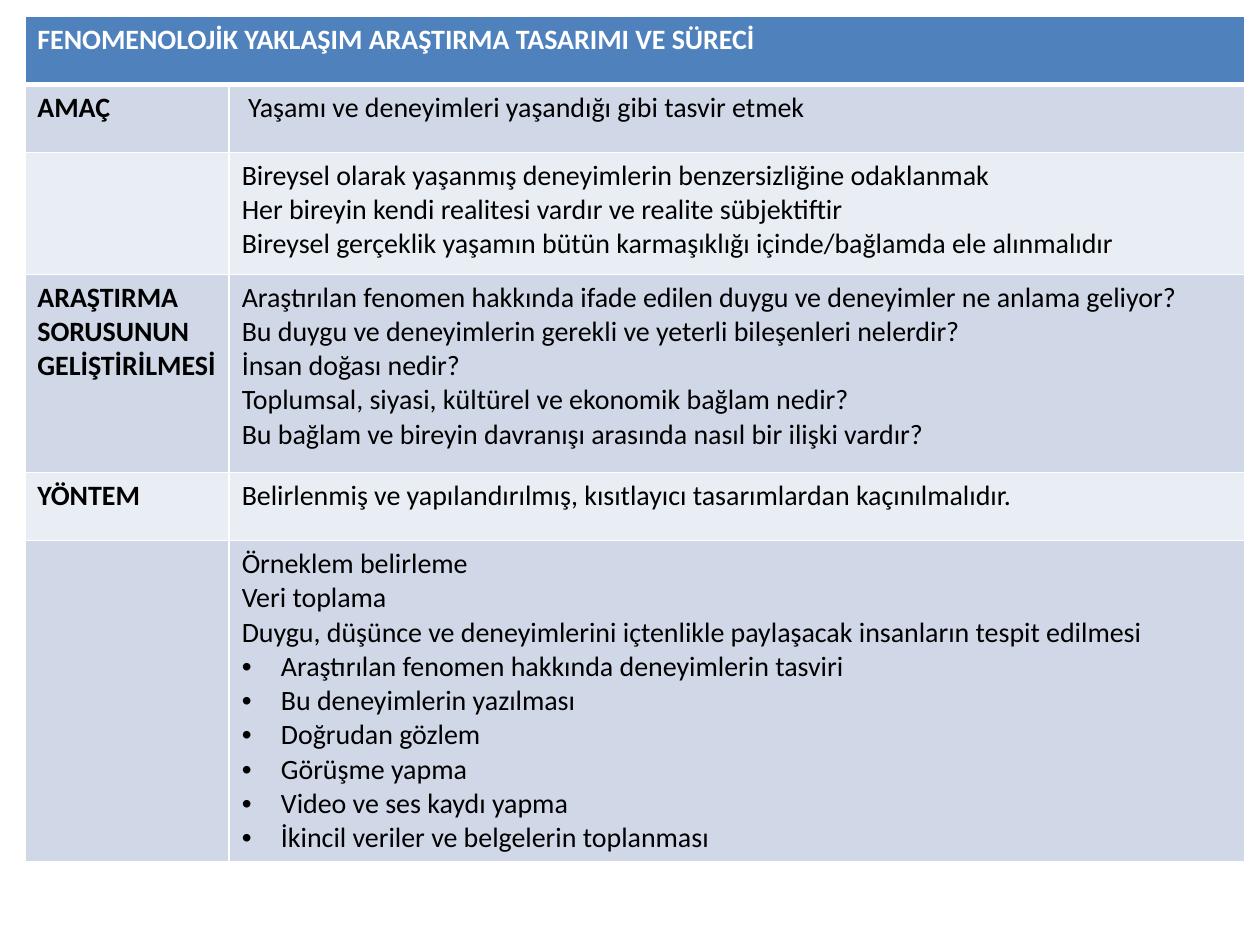
from lxml.etree import SubElement
from pptx import Presentation
from pptx.dml.color import RGBColor
from pptx.oxml.ns import qn
from pptx.util import Cm, Pt

WHITE = RGBColor(0xFF, 0xFF, 0xFF)
BLACK = RGBColor(0, 0, 0)
BLUE = RGBColor(0x4F, 0x81, 0xBD)
BANDS = RGBColor(0xD0, 0xD8, 0xE8), RGBColor(0xE9, 0xED, 0xF4)

WIDTHS = 4.12, 20.48
HEIGHTS = 1.37, 1.37, 2.46, 4, 1.37, 6.35

TITLE = "FENOMENOLOJİK YAKLAŞIM ARAŞTIRMA TASARIMI VE SÜRECİ"
# Each row: label, plain lines, bulleted lines
ROWS = [
    ("AMAÇ", [" Yaşamı ve deneyimleri yaşandığı gibi tasvir etmek"], []),
    ("", [
        "Bireysel olarak yaşanmış deneyimlerin benzersizliğine odaklanmak",
        "Her bireyin kendi realitesi vardır ve realite sübjektiftir",
        "Bireysel gerçeklik yaşamın bütün karmaşıklığı içinde/bağlamda ele alınmalıdır",
    ], []),
    ("ARAŞTIRMA SORUSUNUN GELİŞTİRİLMESİ", [
        "Araştırılan fenomen hakkında ifade edilen duygu ve deneyimler ne anlama geliyor?",
        "Bu duygu ve deneyimlerin gerekli ve yeterli bileşenleri nelerdir?",
        "İnsan doğası nedir?",
        "Toplumsal, siyasi, kültürel ve ekonomik bağlam nedir?",
        "Bu bağlam ve bireyin davranışı arasında nasıl bir ilişki vardır?",
    ], []),
    ("YÖNTEM", [
        "Belirlenmiş ve yapılandırılmış, kısıtlayıcı tasarımlardan kaçınılmalıdır.",
    ], []),
    ("", [
        "Örneklem belirleme",
        "Veri toplama",
        "Duygu, düşünce ve deneyimlerini içtenlikle paylaşacak insanların tespit edilmesi",
    ], [
        "Araştırılan fenomen hakkında deneyimlerin tasviri",
        "Bu deneyimlerin yazılması",
        "Doğrudan gözlem",
        "Görüşme yapma",
        "Video ve ses kaydı yapma",
        "İkincil veriler ve belgelerin toplanması",
    ]),
]


def add_grid(slide):
    frame = slide.shapes.add_table(
        len(HEIGHTS), len(WIDTHS), Cm(0.5), Cm(0.33),
        Cm(sum(WIDTHS)), Cm(sum(HEIGHTS)))
    table = frame.table
    for col, width in zip(table.columns, WIDTHS):
        col.width = Cm(width)
    for row, height in zip(table.rows, HEIGHTS):
        row.height = Cm(height)
    return table


def paint(cell, color, base=1):
    """Draw white borders, the bottom one base points wide, and fill the cell."""
    props = cell._tc.get_or_add_tcPr()
    for side, width in ("L", 1), ("R", 1), ("T", 1), ("B", base):
        line = SubElement(props, qn(f"a:ln{side}"), w=str(Pt(width)))
        fill = SubElement(line, qn("a:solidFill"))
        SubElement(fill, qn("a:srgbClr"), val=str(WHITE))
    cell.fill.solid()
    cell.fill.fore_color.rgb = color


def write(cell, lines, color=BLACK, bold=False):
    cell.text_frame.text = "\n".join(lines)
    for par in cell.text_frame.paragraphs:
        for run in par.runs:
            font = run.font
            font.name, font.size, font.bold = "Calibri", Pt(16), bold
            font.color.rgb = color


def add_bullet(par):
    props = par._p.get_or_add_pPr()
    props.set("marL", str(Cm(0.79)))
    props.set("indent", str(-Cm(0.79)))
    SubElement(props, qn("a:buFont"), typeface="Arial")
    SubElement(props, qn("a:buChar"), char="•")


def fill_head(table):
    first, last = table.cell(0, 0), table.cell(0, 1)
    first.merge(last)
    for cell in first, last:
        paint(cell, BLUE, base=3)
    write(first, [TITLE], WHITE, bold=True)


def fill_row(table, num, label, lines, points):
    name, body = table.cell(num, 0), table.cell(num, 1)
    for cell in name, body:
        paint(cell, BANDS[(num - 1) % 2])
    if label:
        write(name, [label], bold=True)
    write(body, lines + points)
    for par in body.text_frame.paragraphs[len(lines):]:
        add_bullet(par)


def main():
    deck = Presentation()
    deck.slide_width, deck.slide_height = Cm(25.4), Cm(19.05)
    slide = deck.slides.add_slide(deck.slide_layouts[6])
    table = add_grid(slide)
    fill_head(table)
    for num, row in enumerate(ROWS, 1):
        fill_row(table, num, *row)
    deck.save("out.pptx")


if __name__ == "__main__":
    main()
